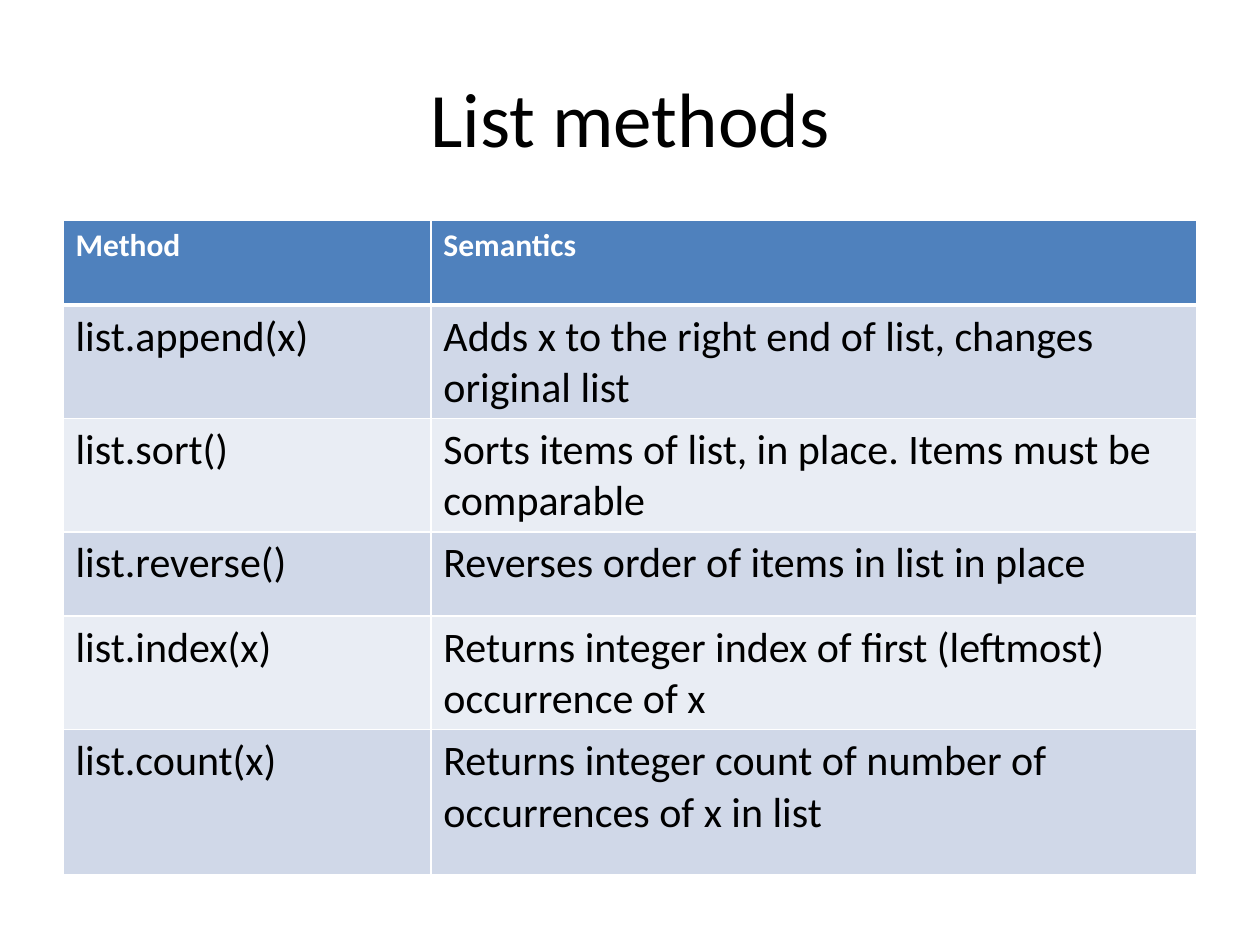
from dataclasses import dataclass

from lxml import etree
from pptx import Presentation
from pptx.dml.color import RGBColor
from pptx.enum.text import MSO_ANCHOR, PP_ALIGN
from pptx.oxml.ns import qn
from pptx.slide import Slide
from pptx.table import _Cell
from pptx.text.text import TextFrame
from pptx.util import Inches, Pt

LEFT, CENTER = PP_ALIGN.LEFT, PP_ALIGN.CENTER
TOP, MIDDLE = MSO_ANCHOR.TOP, MSO_ANCHOR.MIDDLE


@dataclass(frozen=True)
class Theme:
    font: str = "Calibri"
    text: str = "000000"
    white: str = "FFFFFF"
    header: str = "4F81BD"
    bands: tuple[str, str] = ("D0D8E8", "E9EDF4")
    title_size: int = 44
    header_size: int = 18
    body_size: int = 24
    rule: int = 1
    header_rule: int = 3


@dataclass(frozen=True)
class Method:
    call: str
    semantics: str


THEME = Theme()
COLUMN_WIDTHS = (2.92, 6.08)
ROW_HEIGHT = 0.67
LAST_ROW_HEIGHT = 1.15
HEADER = Method("Method", "Semantics")
METHODS = (
    Method("list.append(x)", "Adds x to the right end of list, changes original list"),
    Method("list.sort()", "Sorts items of list, in place. Items must be comparable"),
    Method("list.reverse()", "Reverses order of items in list in place"),
    Method("list.index(x)", "Returns integer index of first (leftmost) occurrence of x"),
    Method("list.count(x)", "Returns integer count of number of occurrences of x in list"),
)


def write_text(tf: TextFrame, text: str, *, size: int, color: str = THEME.text,
               bold: bool = False, align: PP_ALIGN = LEFT,
               anchor: MSO_ANCHOR = TOP) -> None:
    tf.word_wrap = True
    tf.vertical_anchor = anchor
    p = tf.paragraphs[0]
    p.alignment = align
    r = p.add_run()
    r.text = text
    r.font.name = THEME.font
    r.font.size = Pt(size)
    r.font.bold = bold
    r.font.color.rgb = RGBColor.from_string(color)


def set_borders(cell: _Cell, top: int, bottom: int) -> None:
    tc_pr = cell._tc.get_or_add_tcPr()
    widths = {"a:lnL": THEME.rule, "a:lnR": THEME.rule, "a:lnT": top, "a:lnB": bottom}
    for tag, width in widths.items():
        ln = etree.SubElement(tc_pr, qn(tag), w=str(Pt(width)))
        fill = etree.SubElement(ln, qn("a:solidFill"))
        etree.SubElement(fill, qn("a:srgbClr"), val=THEME.white)


def draw_title(s: Slide, text: str) -> None:
    sp = s.shapes.add_textbox(Inches(0.5), Inches(0.3), Inches(9), Inches(1.25))
    write_text(sp.text_frame, text, size=THEME.title_size, align=CENTER, anchor=MIDDLE)


def draw_table(s: Slide, header: Method, methods: tuple[Method, ...]) -> None:
    rows = (header, *methods)
    height = ROW_HEIGHT * len(methods) + LAST_ROW_HEIGHT
    table = s.shapes.add_table(len(rows), len(COLUMN_WIDTHS), Inches(0.5), Inches(1.75),
                               Inches(sum(COLUMN_WIDTHS)), Inches(height)).table
    for column, width in zip(table.columns, COLUMN_WIDTHS):
        column.width = Inches(width)
    for i, method in enumerate(rows):
        is_header = i == 0
        table.rows[i].height = Inches(LAST_ROW_HEIGHT if i == len(methods) else ROW_HEIGHT)
        fill = THEME.header if is_header else THEME.bands[(i - 1) % 2]
        top = THEME.header_rule if i == 1 else THEME.rule
        bottom = THEME.header_rule if is_header else THEME.rule
        for cell, text in zip(table.rows[i].cells, (method.call, method.semantics)):
            set_borders(cell, top, bottom)
            cell.fill.solid()
            cell.fill.fore_color.rgb = RGBColor.from_string(fill)
            write_text(cell.text_frame, text, bold=is_header,
                       size=THEME.header_size if is_header else THEME.body_size,
                       color=THEME.white if is_header else THEME.text)


def main() -> None:
    prs = Presentation()
    prs.slide_width, prs.slide_height = Inches(10), Inches(7.5)
    s = prs.slides.add_slide(prs.slide_layouts[6])
    draw_title(s, "List methods")
    draw_table(s, HEADER, METHODS)
    prs.save("out.pptx")


if __name__ == "__main__":
    main()
